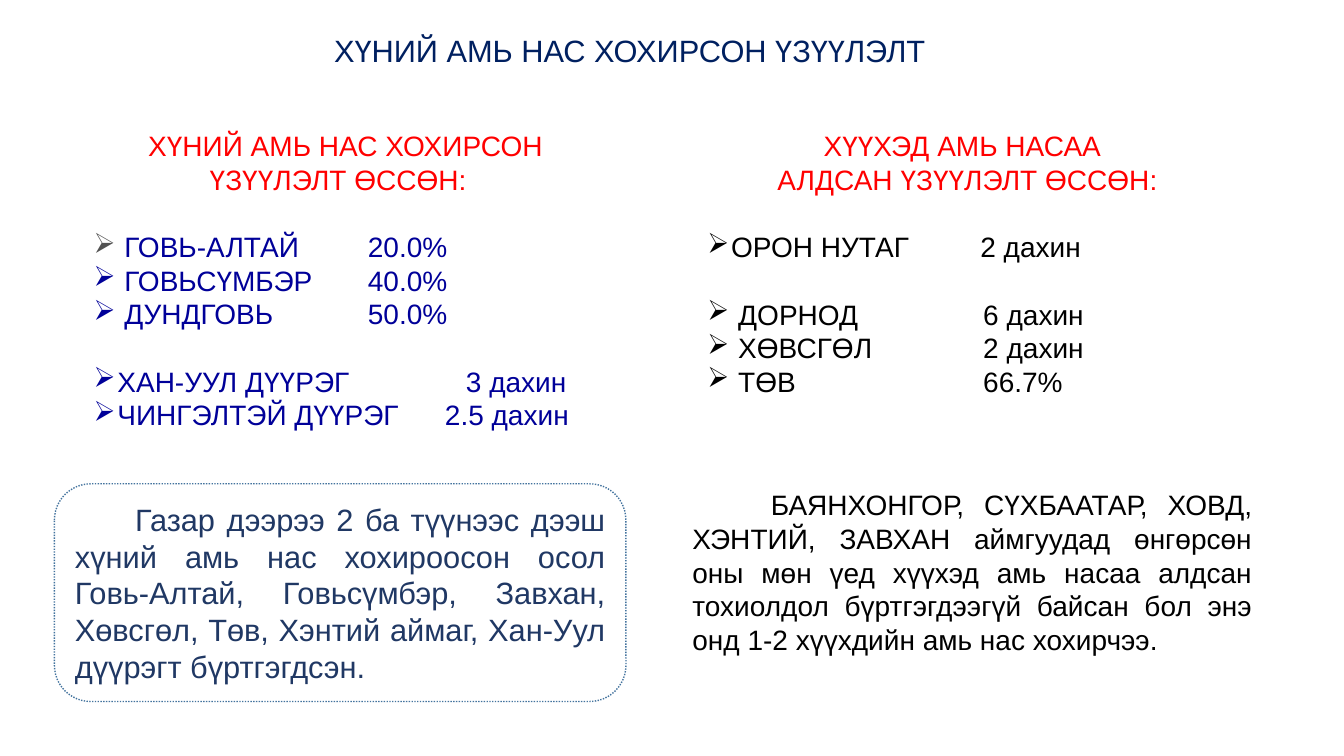
from pptx import Presentation
from pptx.dml.color import RGBColor
from pptx.enum.dml import MSO_LINE
from pptx.enum.shapes import MSO_SHAPE
from pptx.enum.text import MSO_ANCHOR, PP_ALIGN
from pptx.oxml.ns import qn
from pptx.util import Pt
from lxml import etree

RECT = MSO_SHAPE.RECTANGLE
ROUNDED = MSO_SHAPE.FLOWCHART_ALTERNATE_PROCESS
DOTTED = MSO_LINE.ROUND_DOT
TOP, MIDDLE = MSO_ANCHOR.TOP, MSO_ANCHOR.MIDDLE
LEFT, CENTER, JUSTIFY = PP_ALIGN.LEFT, PP_ALIGN.CENTER, PP_ALIGN.JUSTIFY

COLORS = {"white": "FFFFFF", "title": "002060", "heading": "FF0000",
          "black": "000000", "blue": "000099", "gray": "525252",
          "note": "203864", "border": "43739E"}
FONT = "Arial"
GAP = 24


def color(name):
    """Return the named colour."""
    return RGBColor.from_string(COLORS[name])


def add_panel(s, box, kind=RECT, anchor=TOP):
    """Add a white, wrapped text panel."""
    sp = s.shapes.add_shape(kind, *(Pt(v) for v in box))
    sp.shadow.inherit = False
    sp.fill.solid()
    sp.fill.fore_color.rgb = color("white")
    sp.line.color.rgb = color("white")
    sp.line.width = Pt(0.75)
    sp.text_frame.word_wrap = True
    sp.text_frame.vertical_anchor = anchor
    return sp


def write(p, text, size, name, align=LEFT, margin=0, indent=0, before=0):
    """Fill and format one paragraph."""
    p.text = text
    p.alignment = align
    p.space_before = Pt(before)
    pPr = p._p.get_or_add_pPr()
    pPr.set("marL", str(Pt(margin)))
    pPr.set("indent", str(Pt(indent)))
    for r in p.runs:
        r.font.size = Pt(size)
        r.font.name = FONT
        r.font.color.rgb = color(name)


def add_bullet(p, tab, bullet_color):
    """Give a paragraph an arrow bullet and a tab stop for its value."""
    pPr = p._p.get_or_add_pPr()
    bu_color = etree.SubElement(pPr, qn("a:buClr"))
    etree.SubElement(bu_color, qn("a:srgbClr"), val=COLORS[bullet_color])
    etree.SubElement(pPr, qn("a:buFont"), typeface="Wingdings")
    etree.SubElement(pPr, qn("a:buChar"), char="Ø")
    tabs = etree.SubElement(pPr, qn("a:tabLst"))
    etree.SubElement(tabs, qn("a:tab"), pos=str(Pt(tab)), algn="l")


def add_title(s, box, text):
    """Add the slide title."""
    sp = s.shapes.add_textbox(*(Pt(v) for v in box))
    tf = sp.text_frame
    tf.word_wrap = True
    tf.vertical_anchor = MIDDLE
    write(tf.paragraphs[0], text, 22, "title", CENTER)
    tf.paragraphs[0].line_spacing = 0.9


def add_list(s, box, heading, items, name):
    """Add a two-line red heading above bulleted names and values."""
    tf = add_panel(s, box).text_frame
    for i, (text, margin) in enumerate(heading):
        p = tf.paragraphs[0] if i == 0 else tf.add_paragraph()
        write(p, text, 20, "heading", margin=margin)
    for label, value, margin, tab, before, bullet_color in items:
        p = tf.add_paragraph()
        write(p, f"{label}\t{value}", 20, name, LEFT, margin, -margin, before)
        add_bullet(p, tab, bullet_color)


def add_note(s, box, text, size, name, indent, kind=RECT, anchor=TOP):
    """Add a justified paragraph with an indented first line."""
    sp = add_panel(s, box, kind, anchor)
    write(sp.text_frame.paragraphs[0], text, size, name, JUSTIFY, indent=indent)
    return sp


def main():
    """Build and save the slide."""
    prs = Presentation()
    prs.slide_width, prs.slide_height = Pt(960), Pt(540)
    s = prs.slides.add_slide(prs.slide_layouts[6])
    add_title(s, (219, 19.44, 461.5, 36.72), "ХҮНИЙ АМЬ НАС ХОХИРСОН ҮЗҮҮЛЭЛТ")
    add_list(s, (498.24, 88.56, 403.2, 200.88),
             [("ХҮҮХЭД АМЬ НАСАА", 83), ("АЛДСАН ҮЗҮҮЛЭЛТ ӨССӨН:", 50)],
             [("ОРОН НУТАГ", "2 дахин", 17, 195, GAP, "black"),
              ("ДОРНОД", "6 дахин", 22, 197, GAP, "black"),
              ("ХӨВСГӨЛ", "2 дахин", 22, 197, 0, "black"),
              ("ТӨВ", "66.7%", 22, 197, 0, "black")], "black")
    note = add_note(s, (38.88, 345.6, 408.24, 155.52),
                    "Газар дээрээ 2 ба түүнээс дээш хүний амь нас хохироосон осол "
                    "Говь-Алтай, Говьсүмбэр, Завхан, Хөвсгөл, Төв, Хэнтий аймаг, "
                    "Хан-Уул дүүрэгт бүртгэгдсэн.", 22, "note", 43, ROUNDED, MIDDLE)
    note.fill.background()
    note.line.color.rgb = color("border")
    note.line.width = Pt(1)
    note.line.dash_style = DOTTED
    add_list(s, (59.76, 88.56, 386.64, 225.36),
             [("ХҮНИЙ АМЬ НАС ХОХИРСОН", 39), ("ҮЗҮҮЛЭЛТ ӨССӨН:", 83)],
             [("ГОВЬ-АЛТАЙ", "20.0%", 22, 196, GAP, "gray"),
              ("ГОВЬСҮМБЭР", "40.0%", 22, 196, 0, "blue"),
              ("ДУНДГОВЬ", "50.0%", 22, 196, 0, "blue"),
              ("ХАН-УУЛ ДҮҮРЭГ", "3 дахин", 17, 266, GAP, "blue"),
              ("ЧИНГЭЛТЭЙ ДҮҮРЭГ", "2.5 дахин", 17, 251, 0, "blue")], "blue")
    add_note(s, (487.44, 344.88, 414, 128.16),
             "БАЯНХОНГОР, СҮХБААТАР, ХОВД, ХЭНТИЙ, ЗАВХАН аймгуудад өнгөрсөн "
             "оны мөн үед хүүхэд амь насаа алдсан тохиолдол бүртгэгдээгүй байсан "
             "бол энэ онд 1-2 хүүхдийн амь нас хохирчээ.", 20, "black", 56)
    prs.save("out.pptx")


if __name__ == "__main__":
    main()
